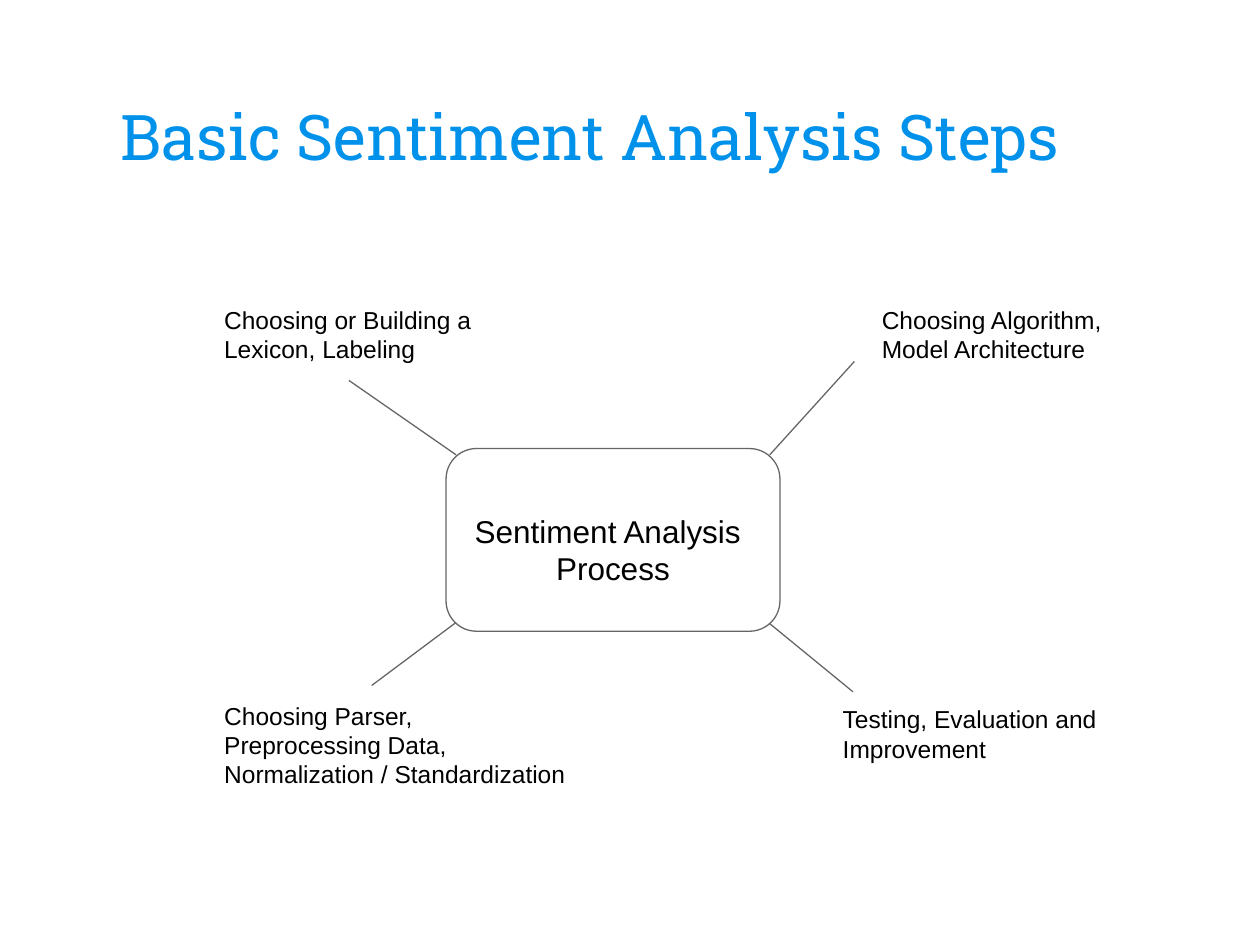
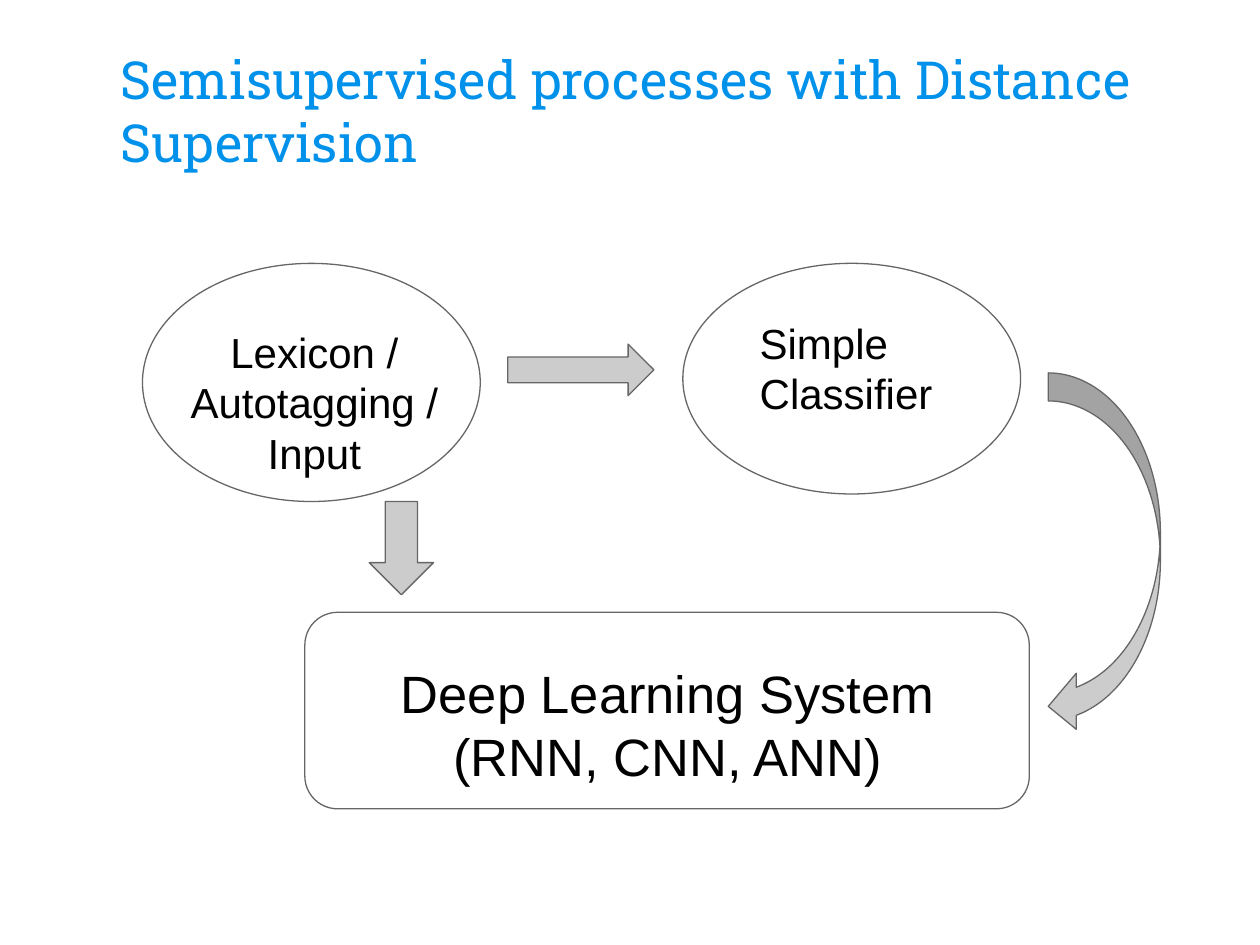
from lxml import etree
from pptx import Presentation
from pptx.dml.color import RGBColor
from pptx.enum import shapes, text
from pptx.oxml.ns import qn
from pptx.util import Pt

COLORS = {"title": "0091EA", "text": "000000", "outline": "666666", "arrow": "CCCCCC"}
TITLE_FONT, BODY_FONT = "Roboto Slab", "Arial"
TITLE_BOX = (61.92, 32.4, 596.16, 73.44)
INSET = Pt(7.2)
LINE_WIDTH = Pt(0.75)
LEFT, CENTER = text.PP_ALIGN.LEFT, text.PP_ALIGN.CENTER
SHAPE = shapes.MSO_SHAPE


def rgb(name):
    return RGBColor.from_string(COLORS[name])


def points(lengths):
    return [Pt(length) for length in lengths]


def add_label(slide, box, lines, size, aligns=(LEFT,), font=BODY_FONT,
              color="text", anchor=text.MSO_ANCHOR.TOP):
    """One paragraph per line; the last alignment serves any further lines."""
    frame = slide.shapes.add_textbox(*points(box)).text_frame
    frame.word_wrap = True
    frame.vertical_anchor = anchor
    frame.margin_left = frame.margin_right = INSET
    frame.margin_top = frame.margin_bottom = INSET
    for index, line in enumerate(lines):
        paragraph = frame.paragraphs[0] if index == 0 else frame.add_paragraph()
        paragraph.alignment = aligns[min(index, len(aligns) - 1)]
        run = paragraph.add_run()
        run.text = line
        run.font.size = Pt(size)
        run.font.name = font
        run.font.color.rgb = rgb(color)


def add_title(slide, title, size):
    add_label(slide, TITLE_BOX, [title], size, font=TITLE_FONT,
              color="title", anchor=text.MSO_ANCHOR.BOTTOM)


def add_outlined(slide, kind, box, fill=None):
    shape = slide.shapes.add_shape(kind, *points(box))
    shape.shadow.inherit = False
    if fill:
        shape.fill.solid()
        shape.fill.fore_color.rgb = rgb(fill)
    else:
        shape.fill.background()
    shape.line.color.rgb = rgb("outline")
    shape.line.width = LINE_WIDTH


def add_spoke(slide, start, end):
    spoke = slide.shapes.add_connector(
        shapes.MSO_CONNECTOR.STRAIGHT, *points(start + end))
    spoke.line.color.rgb = rgb("outline")
    spoke.line.width = LINE_WIDTH
    etree.SubElement(spoke._element.spPr, qn("a:effectLst"))


def build_steps(slide):
    add_title(slide, "Basic Sentiment Analysis Steps", 36)

    # Central process
    add_outlined(slide, SHAPE.ROUNDED_RECTANGLE, (254.9, 256.3, 190.8, 104.4))
    add_label(slide, (264.2, 285.1, 172.1, 46.8),
              ["Sentiment Analysis", "Process"], 18, (LEFT, CENTER))

    # Steps around it: label box, label lines, spoke start, spoke end
    steps = [
        ((121, 167, 203.8, 46.8), ["Choosing or Building a Lexicon, Labeling"],
         (260.6, 259.9), (199.4, 217.4)),
        ((496.8, 167, 172.1, 46.8), ["Choosing Algorithm,", "Model Architecture"],
         (439.9, 259.9), (488.2, 206.6)),
        ((121, 393.1, 210.2, 46.8),
         ["Choosing Parser, Preprocessing Data,", "Normalization / Standardization"],
         (260.6, 355.7), (212.4, 391.7)),
        ((474.5, 395.3, 194.4, 46.8), ["Testing, Evaluation and Improvement"],
         (439.9, 356.4), (487.4, 395.3)),
    ]
    for box, lines, start, end in steps:
        add_spoke(slide, start, end)
        add_label(slide, box, lines, 14)


def build_semisupervised(slide):
    add_title(slide, "Semisupervised processes with Distance Supervision", 30)

    # Input and classifier
    add_outlined(slide, SHAPE.OVAL, (81.4, 150.5, 193, 136.1))
    add_label(slide, (100.8, 179.3, 157.7, 61.2),
              ["Lexicon /", "Autotagging / Input"], 24, (CENTER,))
    add_outlined(slide, SHAPE.OVAL, (390.2, 150.5, 193, 131.8))
    add_label(slide, (427, 174.2, 187.9, 73.4), ["Simple", "Classifier"], 24)

    # Deep learning system
    add_outlined(slide, SHAPE.ROUNDED_RECTANGLE, (174.2, 349.9, 414, 112.3))
    add_label(slide, (201.6, 370.8, 360, 61.2),
              ["Deep Learning System (RNN, CNN, ANN)"], 30, (CENTER,))

    # Flow arrows
    for kind, box in [
        (SHAPE.RIGHT_ARROW, (290.2, 196.6, 83.5, 29.5)),
        (SHAPE.CURVED_LEFT_ARROW, (599, 213.1, 64.1, 206.6)),
        (SHAPE.DOWN_ARROW, (211, 286.6, 36.7, 53.3)),
    ]:
        add_outlined(slide, kind, box, "arrow")


def main():
    deck = Presentation()
    deck.slide_width, deck.slide_height = Pt(720), Pt(540)
    blank = deck.slide_layouts[6]
    for build in (build_steps, build_semisupervised):
        build(deck.slides.add_slide(blank))
    deck.save("out.pptx")


if __name__ == "__main__":
    main()
